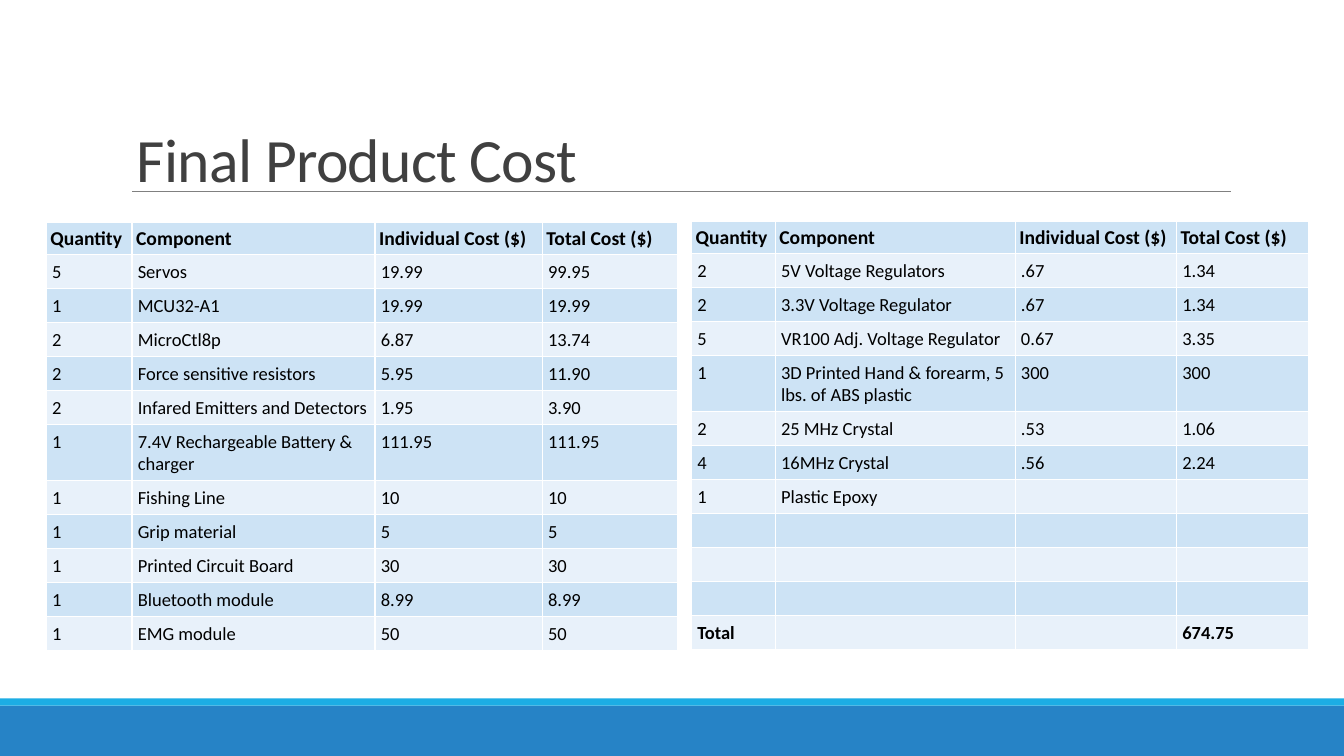
from dataclasses import dataclass

from lxml.etree import SubElement
from pptx import Presentation
from pptx.dml.color import RGBColor
from pptx.enum.shapes import MSO_CONNECTOR, MSO_SHAPE
from pptx.enum.text import MSO_ANCHOR
from pptx.oxml.ns import qn
from pptx.util import Inches, Pt

TITLE = "Final Product Cost"
HEADER = ("Quantity", "Component", "Individual Cost ($)", "Total Cost ($)")
MAIN_PARTS = [
    ("5", "Servos", "19.99", "99.95"),
    ("1", "MCU32-A1", "19.99", "19.99"),
    ("2", "MicroCtl8p", "6.87", "13.74"),
    ("2", "Force sensitive resistors", "5.95", "11.90"),
    ("2", "Infared Emitters and Detectors", "1.95", "3.90"),
    ("1", "7.4V Rechargeable Battery & charger", "111.95", "111.95"),
    ("1", "Fishing Line", "10", "10"),
    ("1", "Grip material", "5", "5"),
    ("1", "Printed Circuit Board", "30", "30"),
    ("1", "Bluetooth module", "8.99", "8.99"),
    ("1", "EMG module", "50", "50"),
]
OTHER_PARTS = [
    ("2", "5V Voltage Regulators", ".67", "1.34"),
    ("2", "3.3V Voltage Regulator", ".67", "1.34"),
    ("5", "VR100 Adj. Voltage Regulator", "0.67", "3.35"),
    ("1", "3D Printed Hand & forearm, 5 lbs. of ABS plastic", "300", "300"),
    ("2", "25 MHz Crystal", ".53", "1.06"),
    ("4", "16MHz Crystal", ".56", "2.24"),
    ("1", "Plastic Epoxy", "", ""),
    *[("",) * 4] * 3,
    ("Total", "", "", "674.75"),
]
# left, top, column widths, part rows
COST_TABLES = [
    (0.46, 2.21, (0.85, 2.41, 1.66, 1.34), MAIN_PARTS),
    (6.86, 2.2, (0.83, 2.38, 1.6, 1.31), OTHER_PARTS),
]
WIDTH, HEIGHT = 13.33, 7.5


@dataclass(frozen=True)
class Theme:
    font: str = "Calibri"
    title: str = "404040"
    text: str = "000000"
    rule: str = "808080"
    border: str = "FFFFFF"
    footer: str = "2683C6"
    stripe: str = "1CADE4"
    bands: tuple = ("CDE3F5", "E8F1FA")
    title_size: float = 44
    header_size: float = 14
    body_size: float = 13.2
    header_margin: float = 2.9
    body_margin: float = 4.1
    header_row: float = 22.9
    body_row: float = 24.3


THEME = Theme()


def write(frame, text, size, color=THEME.text, bold=False, line_spacing=None, tracking=None):
    para = frame.paragraphs[0]
    para.line_spacing = line_spacing
    if not text:
        # An empty line takes its height from the end-of-paragraph size.
        SubElement(para._p, qn("a:endParaRPr"), sz=str(round(size * 100)))
        return
    span = para.add_run()
    span.text = text
    span.font.name, span.font.size, span.font.bold = THEME.font, Pt(size), bold
    span.font.color.rgb = RGBColor.from_string(color)
    if tracking is not None:
        span.font._element.set("spc", str(round(tracking * 100)))


def add_band(page, top, height, color):
    band = page.shapes.add_shape(MSO_SHAPE.RECTANGLE, 0, Inches(top), Inches(WIDTH), Inches(height))
    band.shadow.inherit = False
    band.fill.solid()
    band.fill.fore_color.rgb = RGBColor.from_string(color)
    band.line.fill.background()


def add_title(page):
    rule = page.shapes.add_connector(
        MSO_CONNECTOR.STRAIGHT, Inches(1.31), Inches(1.9), Inches(12.21), Inches(1.9))
    rule.line.color.rgb = RGBColor.from_string(THEME.rule)
    rule.line.width = Pt(0.5)
    SubElement(rule._element.spPr, qn("a:effectLst"))
    box = page.shapes.add_textbox(Inches(1.26), Inches(0.33), Inches(8.54), Inches(1.66))
    box.text_frame.word_wrap = True
    box.text_frame.vertical_anchor = MSO_ANCHOR.BOTTOM
    write(box.text_frame, TITLE, THEME.title_size, THEME.title, line_spacing=0.85, tracking=-0.5)


def style_cell(cell, margin, color):
    """Set the insets, white borders and fill of a cell."""
    cell.margin_left = cell.margin_right = cell.margin_top = cell.margin_bottom = Pt(margin)
    properties = cell._tc.get_or_add_tcPr()
    for side in ("lnL", "lnR", "lnT", "lnB"):
        line = SubElement(properties, qn(f"a:{side}"), w=str(Pt(1)))
        SubElement(SubElement(line, qn("a:solidFill")), qn("a:srgbClr"), val=THEME.border)
    cell.fill.solid()
    cell.fill.fore_color.rgb = RGBColor.from_string(color)


def add_cost_table(page, left, top, widths, parts):
    rows = [HEADER, *parts]
    heights = [THEME.header_row] + [THEME.body_row] * len(parts)
    table = page.shapes.add_table(
        len(rows), len(widths), Inches(left), Inches(top),
        Inches(sum(widths)), Pt(sum(heights))).table
    table.first_row = table.horz_banding = False
    for column, width in zip(table.columns, widths):
        column.width = Inches(width)
    for index, (row, values) in enumerate(zip(table.rows, rows)):
        row.height = Pt(heights[index])
        is_header = index == 0
        size = THEME.header_size if is_header else THEME.body_size
        margin = THEME.header_margin if is_header else THEME.body_margin
        for cell, value in zip(row.cells, values):
            style_cell(cell, margin, THEME.bands[index % 2])
            write(cell.text_frame, value, size, bold=is_header or values[0] == "Total")


def main():
    deck = Presentation()
    deck.slide_width, deck.slide_height = Inches(WIDTH), Inches(HEIGHT)
    page = deck.slides.add_slide(deck.slide_layouts[6])
    add_band(page, 7, 0.5, THEME.footer)
    add_band(page, 6.93, 0.07, THEME.stripe)
    add_title(page)
    for cost_table in COST_TABLES:
        add_cost_table(page, *cost_table)
    deck.save("out.pptx")


if __name__ == "__main__":
    main()
